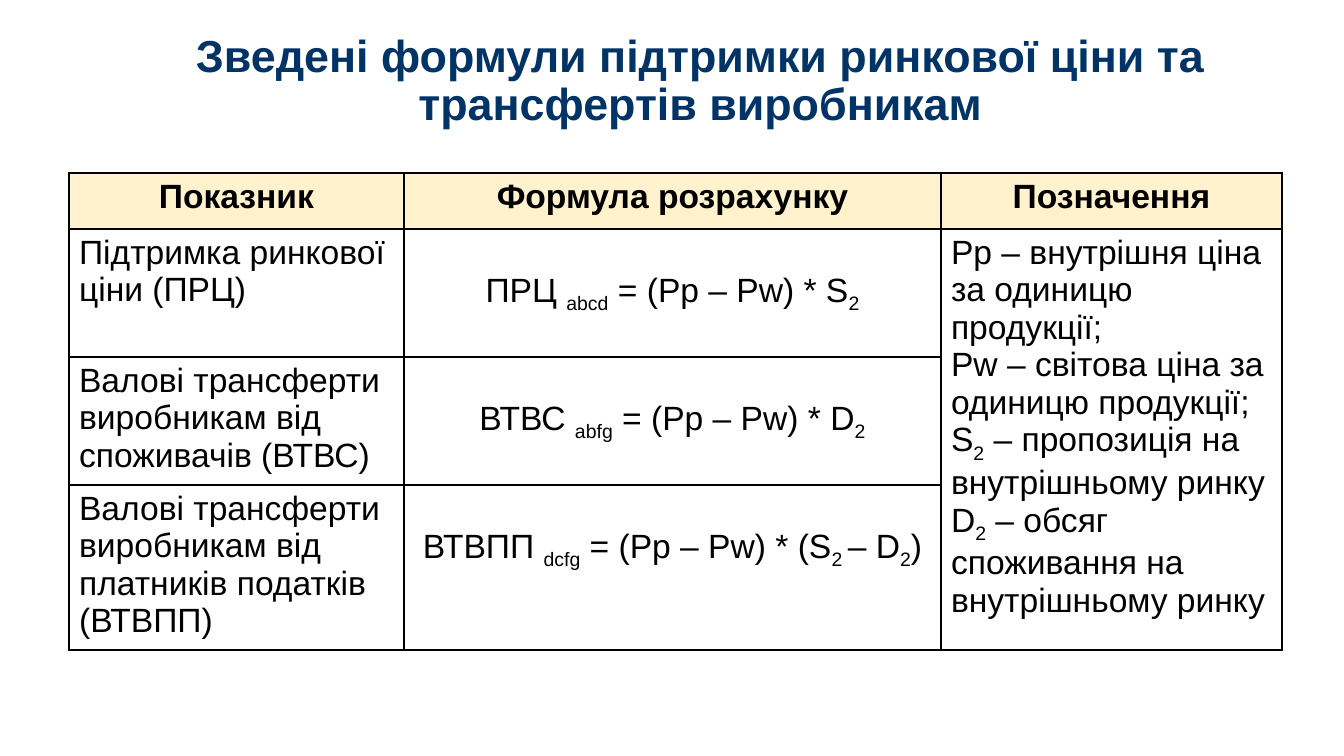
from lxml import etree
from pptx import Presentation
from pptx import util as u
from pptx.dml.color import RGBColor
from pptx.enum import text
from pptx.oxml import ns

TITLE = "Зведені формули підтримки ринкової ціни та трансфертів виробникам"
HEADERS = ["Показник", "Формула розрахунку", "Позначення"]
INDICATORS = [
    "Підтримка ринкової ціни (ПРЦ)",
    "Валові трансферти виробникам від споживачів (ВТВС)",
    "Валові трансферти виробникам від платників податків (ВТВПП)",
]
# Every second piece between bars is a subscript.
FORMULAS = [
    "ПРЦ |abcd| = (Pp – Pw) * S|2",
    "ВТВС |abfg| = (Pp – Pw) * D|2",
    "ВТВПП |dcfg| = (Pp – Pw) * (S|2 |– D|2|)",
]
NOTATION = [
    "Pp – внутрішня ціна за одиницю продукції;",
    "Pw – світова ціна за одиницю продукції;",
    "S|2| – пропозиція на внутрішньому ринку",
    "D|2| – обсяг споживання на внутрішньому ринку",
]

NAVY = RGBColor(0x00, 0x33, 0x66)
BLACK = RGBColor(0x00, 0x00, 0x00)
CREAM = RGBColor(0xFF, 0xF2, 0xCC)
WHITE = RGBColor(0xFF, 0xFF, 0xFF)
FONT = "Arial"

SLIDE_SIZE = (1344, 756)
TITLE_BOX = (94, 22, 1213, 120)
TABLE_LEFT, TABLE_TOP = 69, 173
COLUMNS = [335, 537, 341]
ROWS = [56, 128, 128, 165]
FORMULA_TOP = 43
CENTER = text.PP_ALIGN.CENTER
LEFT = text.PP_ALIGN.LEFT


def px(n):
    return u.Emu(round(n * 12192000 / SLIDE_SIZE[0]))


def style(r, size, color, bold):
    r.font.name = FONT
    r.font.size = u.Pt(size)
    r.font.color.rgb = color
    r.font.bold = bold


def draw_borders(cell):
    tc_pr = cell._tc.get_or_add_tcPr()
    for i, side in enumerate(("a:lnL", "a:lnR", "a:lnT", "a:lnB")):
        ln = etree.Element(ns.qn(side), w=str(u.Pt(1)))
        fill = etree.SubElement(ln, ns.qn("a:solidFill"))
        etree.SubElement(fill, ns.qn("a:srgbClr"), val=str(BLACK))
        tc_pr.insert(i, ln)


def fill_cell(cell, lines, align, bold=False):
    tf = cell.text_frame
    for i, line in enumerate(lines):
        p = tf.add_paragraph() if i else tf.paragraphs[0]
        p.alignment = align
        for j, piece in enumerate(line.split("|")):
            r = p.add_run()
            r.text = piece
            style(r, 24, BLACK, bold)
            if j % 2:
                r.font._element.set("baseline", "-25000")


def add_title(s):
    sp = s.shapes.title
    sp.left, sp.top, sp.width, sp.height = map(px, TITLE_BOX)
    tf = sp.text_frame
    tf.text = TITLE
    tf.word_wrap = True
    tf.auto_size = text.MSO_AUTO_SIZE.NONE
    tf.vertical_anchor = text.MSO_ANCHOR.MIDDLE
    p = tf.paragraphs[0]
    p.alignment = CENTER
    p.line_spacing = 0.9
    style(p.runs[0], 32, NAVY, True)


def add_formula_table(s):
    table = s.shapes.add_table(
        len(ROWS), len(COLUMNS), px(TABLE_LEFT), px(TABLE_TOP),
        px(sum(COLUMNS)), px(sum(ROWS))).table
    for column, width in zip(table.columns, COLUMNS):
        column.width = px(width)
    for i, (row, height) in enumerate(zip(table.rows, ROWS)):
        row.height = px(height)
        for cell in row.cells:
            cell.fill.solid()
            cell.fill.fore_color.rgb = WHITE if i else CREAM
            draw_borders(cell)
    for i, header in enumerate(HEADERS):
        fill_cell(table.cell(0, i), [header], CENTER, True)
    for i, (indicator, formula) in enumerate(zip(INDICATORS, FORMULAS), 1):
        fill_cell(table.cell(i, 0), [indicator], LEFT)
        fill_cell(table.cell(i, 1), [formula], CENTER)
        table.cell(i, 1).margin_top = px(FORMULA_TOP)
    table.cell(1, 2).merge(table.cell(len(ROWS) - 1, 2))
    fill_cell(table.cell(1, 2), NOTATION, LEFT)


def main():
    prs = Presentation()
    prs.slide_width, prs.slide_height = map(px, SLIDE_SIZE)
    s = prs.slides.add_slide(prs.slide_layouts[5])
    add_title(s)
    add_formula_table(s)
    prs.save("out.pptx")


if __name__ == "__main__":
    main()
